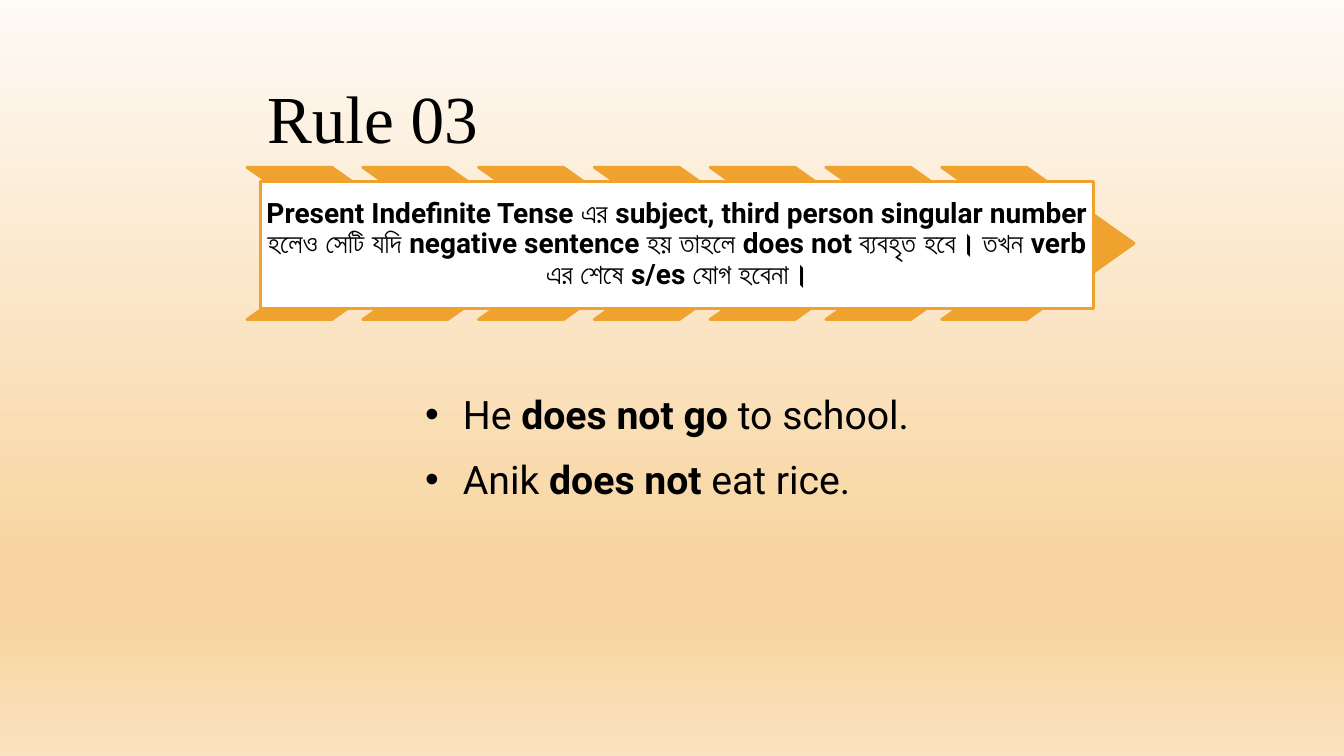
"""Build the Rule 03 grammar slide on the present indefinite tense."""
import pptx
import pptx.dml.color
import pptx.enum.shapes
import pptx.enum.text
import pptx.oxml
import pptx.oxml.ns
import pptx.util
from lxml import etree

Pt = pptx.util.Pt
RGBColor = pptx.dml.color.RGBColor
Anchor = pptx.enum.text.MSO_ANCHOR
Align = pptx.enum.text.PP_ALIGN
AutoSize = pptx.enum.text.MSO_AUTO_SIZE
Shape = pptx.enum.shapes.MSO_SHAPE
qn = pptx.oxml.ns.qn

TITLE = "Rule 03"
RULE = (
    "Present Indefinite Tense এর subject, third person singular number "
    "হলেও সেটি যদি negative sentence হয় তাহলে does not ব্যবহৃত হবে। "
    "তখন verb এর শেষে s/es যোগ হবেনা।"
)
EXAMPLES = [
    [("He ", False), ("does not go ", True), ("to school.", False)],
    [("Anik ", False), ("does not ", True), ("eat rice.", False)],
]

BLACK = RGBColor(0x00, 0x00, 0x00)
WHITE = RGBColor(0xFF, 0xFF, 0xFF)
ORANGE = RGBColor(0xF0, 0xA2, 0x2E)
BACKGROUND = [
    (0, RGBColor(0xFE, 0xFA, 0xF5)),
    (74, RGBColor(0xF8, 0xD5, 0xA1)),
    (83, RGBColor(0xF8, 0xD5, 0xA1)),
    (100, RGBColor(0xFA, 0xE3, 0xC0)),
]

TITLE_BOX = (176.4, 74.2, 587.5, 53.3)
RULE_BOX = (185.8, 129.6, 595.4, 90.7)
EXAMPLE_BOX = (296.6, 270, 413.3, 92.2)
CHEVRON_BOX = (176.4, 119.5, 137.5, 108.7)
CHEVRON_COUNT = 7
CHEVRON_STEP = 82.7
CHEVRON_POINT = 0.706
BULLET_INDENT = 27
TAB_STOP = 36


def paint_background(page):
    fill = page.background.fill
    fill.gradient()
    fill.gradient_angle = 270
    stops = page.element.find(".//" + qn("a:gsLst"))
    for stop in list(stops):
        stops.remove(stop)
    for percent, color in BACKGROUND:
        stop = etree.SubElement(stops, qn("a:gs"), pos=str(percent * 1000))
        etree.SubElement(stop, qn("a:srgbClr"), val=str(color))


def add_orange_shape(page, kind, box, fill):
    shape = page.shapes.add_shape(kind, *map(Pt, box))
    shape.shadow.inherit = False
    shape.fill.solid()
    shape.fill.fore_color.rgb = fill
    shape.line.color.rgb = ORANGE
    shape.line.width = Pt(2)
    return shape


def set_frame(frame, anchor, inset):
    frame.word_wrap = True
    frame.auto_size = AutoSize.NONE
    frame.vertical_anchor = anchor
    frame.margin_left = frame.margin_right = Pt(inset)
    frame.margin_top = frame.margin_bottom = Pt(inset)


def add_span(para, text, font, size, bold=False):
    span = para.add_run()
    span.text = text
    span.font.name = font
    span.font.size = Pt(size)
    span.font.bold = bold
    span.font.color.rgb = BLACK


def add_bullet(para):
    props = para._p.get_or_add_pPr()
    props.set("marL", str(Pt(BULLET_INDENT)))
    props.set("indent", str(-Pt(BULLET_INDENT)))
    etree.SubElement(props, qn("a:buFont"), typeface="Arial")
    etree.SubElement(props, qn("a:buChar"), char="•")
    tabs = etree.SubElement(props, qn("a:tabLst"))
    etree.SubElement(tabs, qn("a:tab"), pos=str(Pt(TAB_STOP)), algn="l")


def add_title(page):
    title = page.shapes.title
    title.left, title.top, title.width, title.height = map(Pt, TITLE_BOX)
    set_frame(title.text_frame, Anchor.BOTTOM, 14.4)
    para = title.text_frame.paragraphs[0]
    para.alignment = Align.LEFT
    para.line_spacing = 0.9
    add_span(para, TITLE, "Times New Roman", 48)


def add_rule(page):
    left, top, width, height = CHEVRON_BOX
    for index in range(CHEVRON_COUNT):
        box = (left + index * CHEVRON_STEP, top, width, height)
        chevron = add_orange_shape(page, Shape.CHEVRON, box, ORANGE)
        chevron.adjustments[0] = CHEVRON_POINT
    panel = add_orange_shape(page, Shape.RECTANGLE, RULE_BOX, WHITE)
    set_frame(panel.text_frame, Anchor.MIDDLE, 4.3)
    para = panel.text_frame.paragraphs[0]
    para.alignment = Align.CENTER
    para.line_spacing = 0.9
    add_span(para, RULE, "Roboto", 20, True)


def add_examples(page):
    frame = page.shapes.add_textbox(*map(Pt, EXAMPLE_BOX)).text_frame
    frame.word_wrap = True
    frame.auto_size = AutoSize.SHAPE_TO_FIT_TEXT
    for index, example in enumerate(EXAMPLES):
        para = frame.add_paragraph() if index else frame.paragraphs[0]
        add_bullet(para)
        para.line_spacing = 1.15
        para.space_after = Pt(8)
        for text, bold in example:
            add_span(para, text, "Roboto", 28, bold)


def main():
    deck = pptx.Presentation()
    deck.slide_width, deck.slide_height = Pt(960), Pt(540)
    page = deck.slides.add_slide(deck.slide_layouts[5])
    paint_background(page)
    add_title(page)
    add_rule(page)
    add_examples(page)
    deck.save("out.pptx")


if __name__ == "__main__":
    main()
